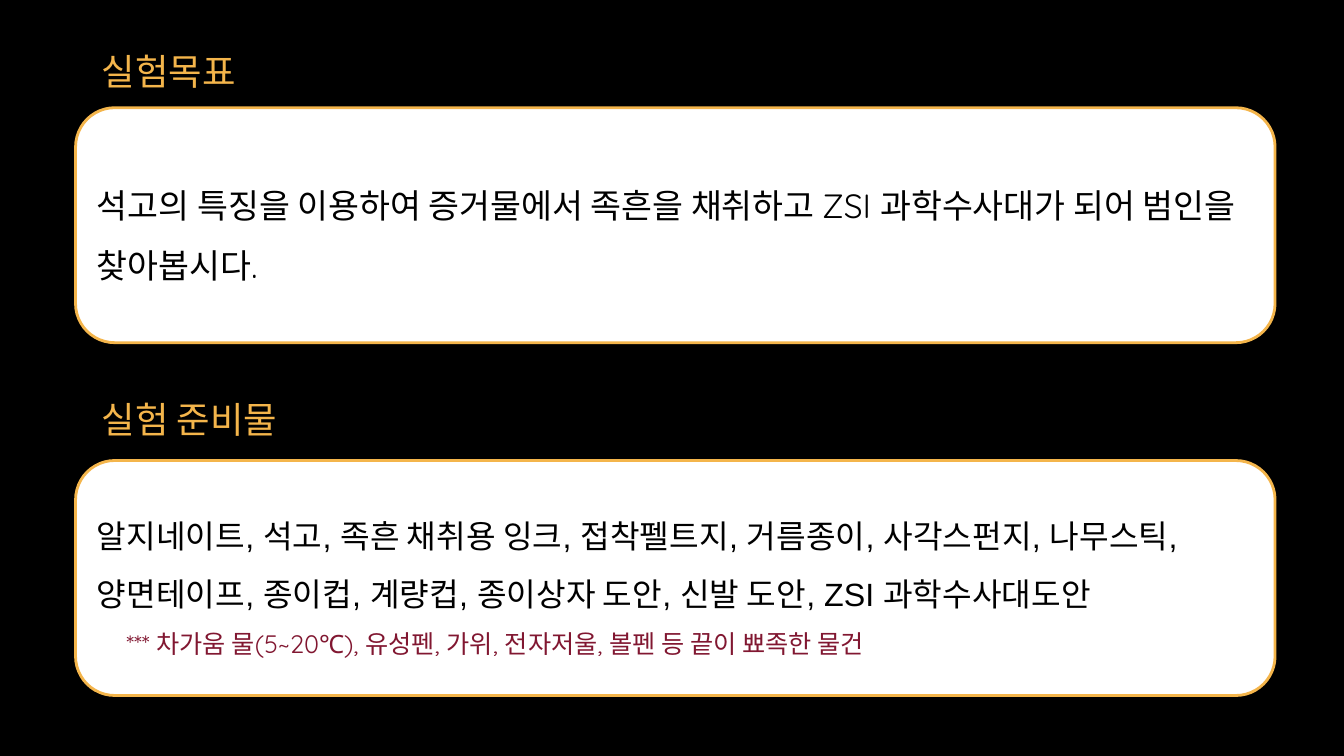
from pptx import Presentation
from pptx.dml.color import RGBColor
from pptx.enum.shapes import MSO_SHAPE
from pptx.enum.text import MSO_ANCHOR, PP_ALIGN
from pptx.util import Pt

ROUND = MSO_SHAPE.ROUNDED_RECTANGLE
MIDDLE, LEFT = MSO_ANCHOR.MIDDLE, PP_ALIGN.LEFT

BLACK = RGBColor(0x00, 0x00, 0x00)
WHITE = RGBColor(0xFF, 0xFF, 0xFF)
GOLD = RGBColor(0xF4, 0xB5, 0x4B)
WINE = RGBColor(0x81, 0x17, 0x31)
SANS, QUICK = "Arial", "Quicksand"

# Title, title top, title width, card top, lines of (text, size, font, colour, indent)
PARTS = [
    ("실험목표", 28.1, 141, 77, [
        ("석고의 특징을 이용하여 증거물에서 족흔을 채취하고 ZSI 과학수사대가 되어 "
         "범인을 찾아봅시다.", 24, QUICK, BLACK, 0),
    ]),
    ("실험 준비물", 276.5, 165.6, 329, [
        ("알지네이트, 석고, 족흔 채취용 잉크, 접착펠트지, 거름종이, 사각스펀지, "
         "나무스틱, 양면테이프, 종이컵, 계량컵, 종이상자 도안, 신발 도안, "
         "ZSI 과학수사대도안", 23, SANS, BLACK, 0),
        ("*** 차가움 물(5~20℃), 유성펜, 가위, 전자저울, 볼펜 등 끝이 뾰족한 물건",
         18, QUICK, WINE, 21),
    ]),
]
CARD_X, CARD_W, CARD_H = 54, 856.8, 167.8
TITLE_X, TITLE_H, PAD = 65.5, 34.6, 7.2


def add_run(para, text, size, face, color):
    run = para.add_run()
    run.text = text
    run.font.size = Pt(size)
    run.font.name = face
    run.font.color.rgb = color


def add_title(slide, text, top, width):
    box = slide.shapes.add_textbox(Pt(TITLE_X), Pt(top), Pt(width), Pt(TITLE_H))
    frame = box.text_frame
    frame.word_wrap = True
    frame.margin_left = frame.margin_right = Pt(PAD)
    frame.margin_top = frame.margin_bottom = Pt(PAD)
    add_run(frame.paragraphs[0], text, 26, QUICK, GOLD)


def add_card(slide, top, lines):
    card = slide.shapes.add_shape(ROUND, Pt(CARD_X), Pt(top), Pt(CARD_W), Pt(CARD_H))
    card.shadow.inherit = False
    card.fill.solid()
    card.fill.fore_color.rgb = WHITE
    card.line.color.rgb = GOLD
    card.line.width = Pt(2)
    frame = card.text_frame
    frame.word_wrap = True
    frame.vertical_anchor = MIDDLE
    for i, (text, size, face, color, indent) in enumerate(lines):
        para = frame.add_paragraph() if i else frame.paragraphs[0]
        para.alignment = LEFT
        para.line_spacing = 1.5
        if indent:
            props = para._p.get_or_add_pPr()
            props.set("marL", str(Pt(indent)))
        add_run(para, text, size, face, color)


def main():
    deck = Presentation()
    deck.slide_width, deck.slide_height = Pt(960), Pt(540)
    slide = deck.slides.add_slide(deck.slide_layouts[6])
    slide.background.fill.solid()
    slide.background.fill.fore_color.rgb = BLACK
    for title, title_y, title_w, card_y, lines in PARTS:
        add_title(slide, title, title_y, title_w)
        add_card(slide, card_y, lines)
    deck.save("out.pptx")


if __name__ == "__main__":
    main()
